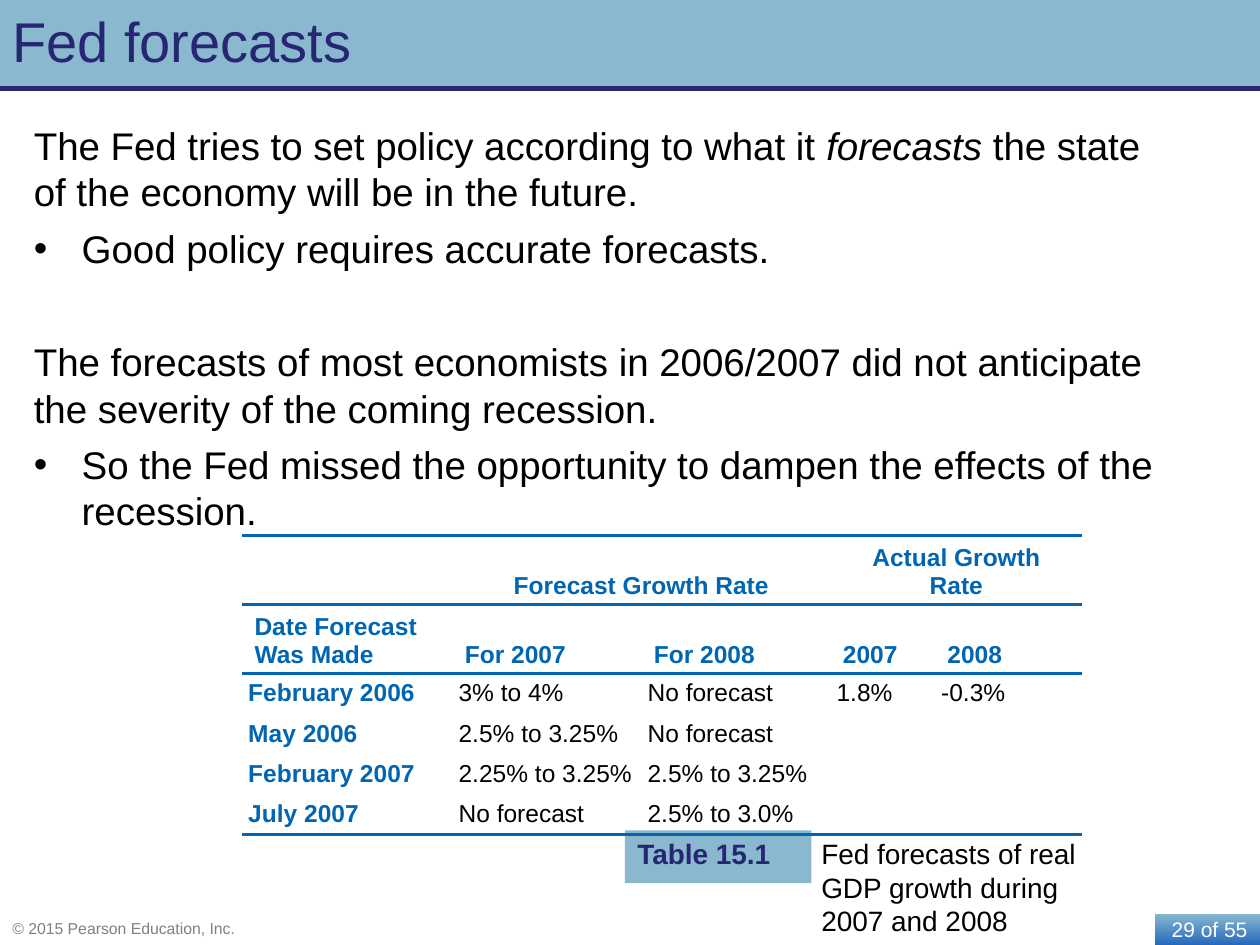
"""Build the slide on Fed forecasts with its table of growth rates."""
from lxml import etree
from pptx import Presentation
from pptx.dml.color import RGBColor
from pptx.enum.shapes import MSO_CONNECTOR, MSO_SHAPE
from pptx.enum.text import MSO_ANCHOR, PP_ALIGN
from pptx.oxml.ns import qn
from pptx.util import Inches, Pt

RECT = MSO_SHAPE.RECTANGLE
LINE = MSO_CONNECTOR.STRAIGHT
TOP, MID, LOW = MSO_ANCHOR.TOP, MSO_ANCHOR.MIDDLE, MSO_ANCHOR.BOTTOM
LEFT, MIDDLE, RIGHT = PP_ALIGN.LEFT, PP_ALIGN.CENTER, PP_ALIGN.RIGHT
HUES = {"navy": "262673", "sky": "89B8CF", "deep": "256ABD", "blue": "0066B3",
        "gray": "808080", "black": "000000", "white": "FFFFFF"}
RGB = {name: RGBColor.from_string(code) for name, code in HUES.items()}


def write(para, text, size, hue, bold=False, slant=False):
    """Add one run to a paragraph."""
    run = para.add_run()
    run.text = text
    font = run.font
    font.name, font.size = "Arial", Pt(size)
    font.bold, font.italic = bold, slant
    font.color.rgb = RGB[hue]


def block(area, fill=None, anchor=TOP):
    """Add a text box, or a filled rectangle, and return it."""
    spot = [Inches(n) for n in area]
    if fill:
        box = slide.shapes.add_shape(RECT, *spot)
        box.shadow.inherit = False
        box.line.fill.background()
        box.fill.solid()
        box.fill.fore_color.rgb = RGB[fill]
    else:
        box = slide.shapes.add_textbox(*spot)
    frame = box.text_frame
    frame.word_wrap = True
    frame.vertical_anchor = anchor
    frame.paragraphs[0].alignment = LEFT
    return box


deck = Presentation()
deck.slide_width, deck.slide_height = Inches(10), Inches(7.5)
slide = deck.slides.add_slide(deck.slide_layouts[6])

page = block((9.17, 7.25, 0.83, 0.25), "sky", MID)
page.fill.gradient()
page.fill.gradient_angle = 270
for stop, hue, place in zip(page.fill.gradient_stops, ("sky", "deep"), (0, 1)):
    stop.color.rgb = RGB[hue]
    stop.position = place
para = page.text_frame.paragraphs[0]
para.alignment = RIGHT
write(para, "29 of 55", 12, "white")

foot = block((0, 7.24, 9.17, 0.26), anchor=MID)
write(foot.text_frame.paragraphs[0], "© 2015 Pearson Education, Inc.", 9, "gray")

block((0, 0, 10, 0.7), "sky")
rule = slide.shapes.add_connector(LINE, 0, Inches(0.7), Inches(10), Inches(0.7))
rule.line.color.rgb = RGB["navy"]
rule.line.width = Pt(3)
etree.SubElement(rule._element.spPr, qn("a:effectLst"))
title = block((0, 0, 10, 0.7))
write(title.text_frame.paragraphs[0], "Fed forecasts", 32, "navy")

points = [
    (0, False, ["The Fed tries to set policy according to what it ", "forecasts",
                " the state of the economy will be in the future."]),
    (6, True, ["Good policy requires accurate forecasts."]),
    (38.4, False, ["The forecasts of most economists in 2006/2007 did not "
                   "anticipate the severity of the coming recession."]),
    (6, True, ["So the Fed missed the opportunity to dampen the effects "
               "of the recession."]),
]
frame = block((0.17, 0.92, 9.25, 2.92)).text_frame
for i, (gap, dot, parts) in enumerate(points):
    para = frame.add_paragraph() if i else frame.paragraphs[0]
    para.space_before = Pt(gap)
    if dot:
        props = para._p.get_or_add_pPr()
        props.set("marL", str(Inches(0.38)))
        props.set("indent", str(-Inches(0.38)))
        etree.SubElement(props, qn("a:buFont"), typeface="Arial")
        etree.SubElement(props, qn("a:buChar"), char="•")
    for part in parts:
        write(para, part, 22, "black", slant=part == "forecasts")

note = block((6.42, 6.59, 2.51, 0.49))
write(note.text_frame.paragraphs[0],
      "Fed forecasts of real GDP growth during 2007 and 2008", 16, "black")
label = block((4.96, 6.59, 1.48, 0.42), "sky")
write(label.text_frame.paragraphs[0], "Table 15.1", 16, "navy", bold=True)

rows = [
    ["", "Forecast Growth Rate", "", "Actual Growth Rate", ""],
    ["Date Forecast Was Made", "For 2007", "For 2008", "2007", "2008"],
    ["February 2006", "3% to 4%", "No forecast", "1.8%", "-0.3%"],
    ["May 2006", "2.5% to 3.25%", "No forecast", "", ""],
    ["February 2007", "2.25% to 3.25%", "2.5% to 3.25%", "", ""],
    ["July 2007", "No forecast", "2.5% to 3.0%", "", ""],
]
wides = [1.67, 1.5, 1.5, 0.83, 1.17]
talls = [0.53, 0.53] + [0.32] * 4
edges = {0: ["lnT", "lnB"], 1: ["lnT", "lnB"], 2: ["lnT"], 5: ["lnB"]}
grid = slide.shapes.add_table(len(rows), len(wides), Inches(1.92), Inches(4.25),
                              Inches(sum(wides)), Inches(sum(talls))).table
grid.first_row = grid.horz_banding = False
for col, wide in zip(grid.columns, wides):
    col.width = Inches(wide)
for row, tall in zip(grid.rows, talls):
    row.height = Inches(tall)
for left in (1, 3):
    grid.cell(0, left).merge(grid.cell(0, left + 1))

for r, row in enumerate(rows):
    head = r < 2
    for c, text in enumerate(row):
        cell = grid.cell(r, c)
        cell.vertical_anchor = LOW if head else MID
        cell.margin_left = cell.margin_right = Inches(0.1 if head else 0.05)
        cell.margin_top = cell.margin_bottom = Inches(0.04)
        props = cell._tc.get_or_add_tcPr()
        for edge in ("lnL", "lnR", "lnT", "lnB"):
            if edge in edges.get(r, []):
                line = etree.SubElement(props, qn("a:" + edge), w=str(Pt(2.25)))
                paint = etree.SubElement(line, qn("a:solidFill"))
                etree.SubElement(paint, qn("a:srgbClr"), val=HUES["blue"])
            else:
                line = etree.SubElement(props, qn("a:" + edge), w="0")
                etree.SubElement(line, qn("a:noFill"))
        cell.fill.background()
        para = cell.text_frame.paragraphs[0]
        para.alignment = LEFT if r else MIDDLE
        if text:
            strong = head or c == 0
            write(para, text, 14, "blue" if strong else "black", bold=strong)
        else:
            etree.SubElement(para._p, qn("a:endParaRPr"), sz="1400")

deck.save("out.pptx")
